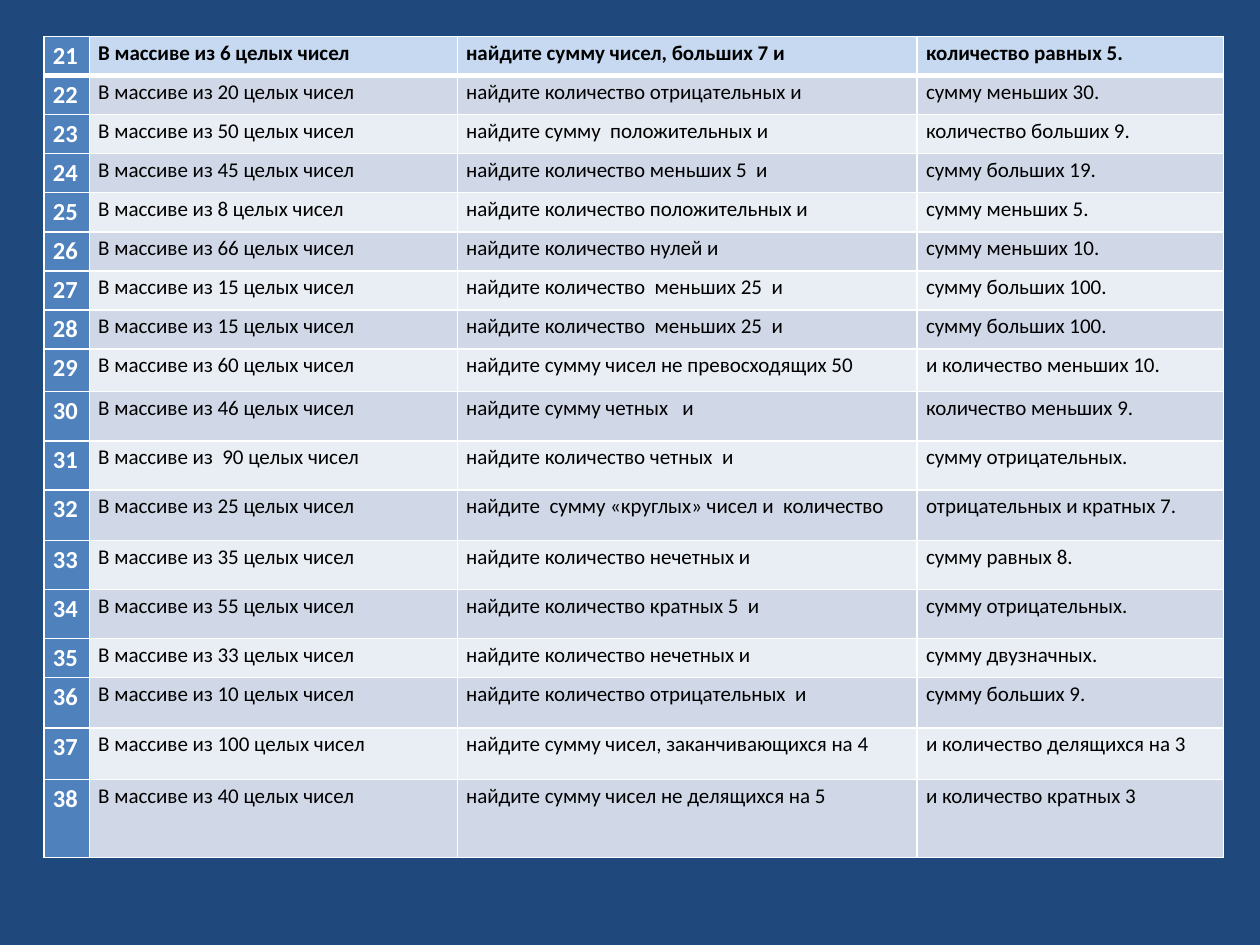
from lxml.etree import SubElement
from pptx import Presentation
from pptx.dml.color import RGBColor
from pptx.oxml.ns import qn
from pptx.util import Inches, Pt

NAVY = RGBColor(0x1F, 0x49, 0x7D)
BLUE = RGBColor(0x4F, 0x81, 0xBD)
SKY = RGBColor(0xC6, 0xD9, 0xF1)
BAND_DARK = RGBColor(0xD0, 0xD8, 0xE8)
BAND_LIGHT = RGBColor(0xE9, 0xED, 0xF4)
WHITE = RGBColor(0xFF, 0xFF, 0xFF)
BLACK = RGBColor(0, 0, 0)

FONT = "Calibri"
LEFT, TOP = 0.35, 0.29
COLUMN_WIDTHS = [0.36, 2.92, 3.65, 2.43]
FIRST_NUMBER = 21
THIN, THICK = 1, 3

# Row height, array size, first question, second question
TASKS = [
    (0.31, "6", "найдите сумму чисел, больших 7 и", "количество равных 5."),
    (0.31, "20", "найдите количество отрицательных и", "сумму меньших 30."),
    (0.31, "50", "найдите сумму  положительных и", "количество больших 9."),
    (0.31, "45", "найдите количество меньших 5  и", "сумму больших 19."),
    (0.31, "8", "найдите количество положительных и", "сумму меньших 5."),
    (0.31, "66", "найдите количество нулей и", "сумму меньших 10."),
    (0.31, "15", "найдите количество  меньших 25  и", "сумму больших 100."),
    (0.31, "15", "найдите количество  меньших 25  и", "сумму больших 100."),
    (0.34, "60", "найдите сумму чисел не превосходящих 50", "и количество меньших 10."),
    (0.39, "46", "найдите сумму четных   и", "количество меньших 9."),
    (0.39, " 90", "найдите количество четных  и", "сумму отрицательных."),
    (0.4, "25", "найдите  сумму «круглых» чисел и  количество", "отрицательных и кратных 7."),
    (0.39, "35", "найдите количество нечетных и", "сумму равных 8."),
    (0.39, "55", "найдите количество кратных 5  и", "сумму отрицательных."),
    (0.31, "33", "найдите количество нечетных и", "сумму двузначных."),
    (0.4, "10", "найдите количество отрицательных  и", "сумму больших 9."),
    (0.41, "100", "найдите сумму чисел, заканчивающихся на 4", "и количество делящихся на 3"),
    (0.62, "40", "найдите сумму чисел не делящихся на 5", "и количество кратных 3"),
]


def set_borders(cell, top, bottom):
    """Draw white cell borders; the side ones are always thin."""
    properties = cell._tc.get_or_add_tcPr()
    for side, width in (("L", THIN), ("R", THIN), ("T", top), ("B", bottom)):
        line = SubElement(properties, qn(f"a:ln{side}"), w=str(Pt(width)))
        fill = SubElement(line, qn("a:solidFill"))
        SubElement(fill, qn("a:srgbClr"), val=str(WHITE))


def write_cell(cell, text, size, color, bold):
    cell.margin_left = cell.margin_right = Inches(0.07)
    cell.margin_top = cell.margin_bottom = 0
    cell.text_frame.text = text
    paragraph = cell.text_frame.paragraphs[0]
    paragraph.line_spacing = 1.15
    paragraph.space_before = Pt(6)
    font = paragraph.runs[0].font
    font.name, font.size, font.bold = FONT, Pt(size), bold
    font.color.rgb = color


def row_color(row):
    if row == 0:
        return SKY
    return BAND_DARK if row % 2 else BAND_LIGHT


def add_task_table(slide):
    heights = [task[0] for task in TASKS]
    table = slide.shapes.add_table(
        len(TASKS), len(COLUMN_WIDTHS), Inches(LEFT), Inches(TOP),
        Inches(sum(COLUMN_WIDTHS)), Inches(sum(heights))).table
    for column, width in zip(table.columns, COLUMN_WIDTHS):
        column.width = Inches(width)

    for row, (height, count, first, second) in enumerate(TASKS):
        table.rows[row].height = Inches(height)
        texts = [str(FIRST_NUMBER + row), f"В массиве из {count} целых чисел", first, second]
        for column, text in enumerate(texts):
            cell = table.cell(row, column)
            is_number = column == 0
            # A thick rule separates the first row from the rest
            set_borders(cell, THICK if row == 1 else THIN, THICK if row == 0 else THIN)
            cell.fill.solid()
            cell.fill.fore_color.rgb = BLUE if is_number else row_color(row)
            if is_number:
                write_cell(cell, text, 14, WHITE, True)
            else:
                write_cell(cell, text, 12, BLACK, row == 0)


def main():
    deck = Presentation()
    deck.slide_width, deck.slide_height = Inches(10), Inches(7.5)
    slide = deck.slides.add_slide(deck.slide_layouts[6])
    slide.background.fill.solid()
    slide.background.fill.fore_color.rgb = NAVY
    add_task_table(slide)
    deck.save("out.pptx")


if __name__ == "__main__":
    main()
